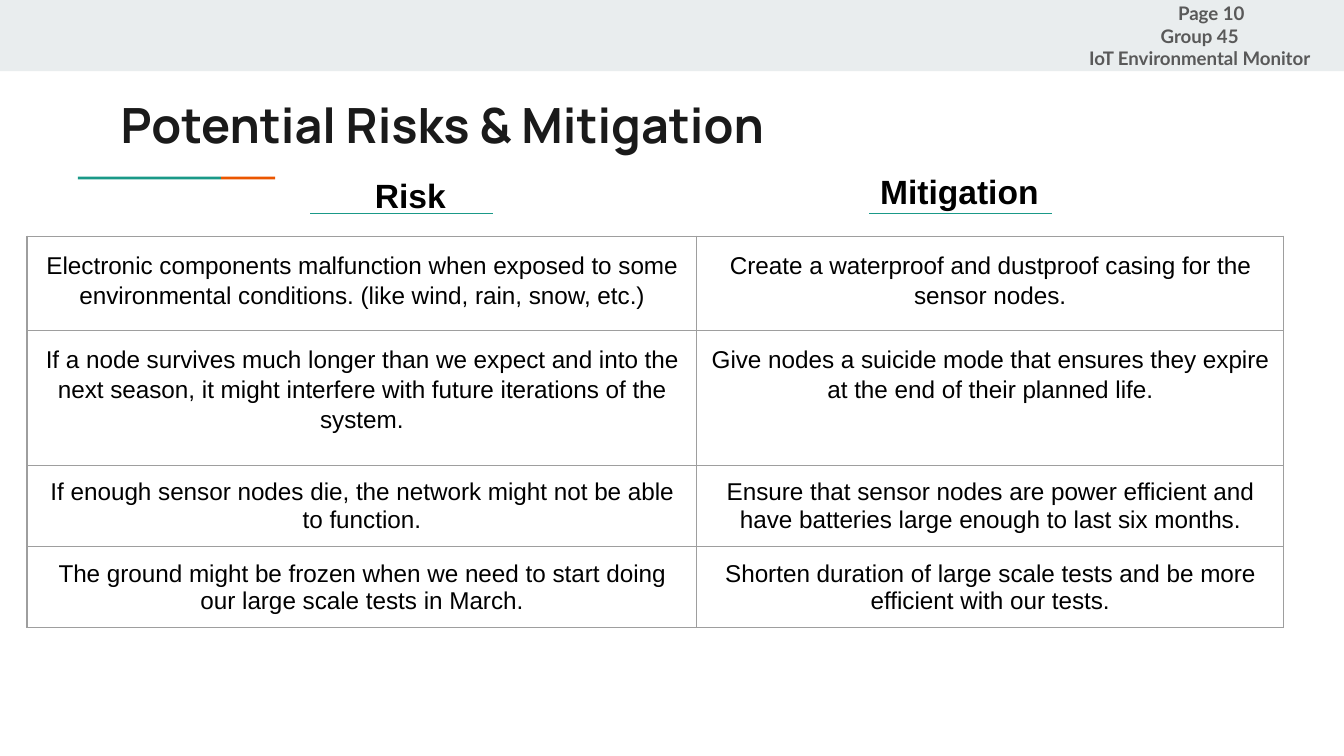
"""Build the "Potential Risks & Mitigation" slide."""
from dataclasses import dataclass

from lxml import etree
from pptx import Presentation
from pptx.dml.color import RGBColor
from pptx.enum.shapes import MSO_CONNECTOR, MSO_SHAPE
from pptx.enum.text import MSO_ANCHOR, PP_ALIGN
from pptx.oxml.ns import qn
from pptx.slide import Slide
from pptx.table import _Cell
from pptx.text.text import TextFrame
from pptx.util import Pt

CENTER, LEFT = PP_ALIGN.CENTER, PP_ALIGN.LEFT
TOP, MIDDLE = MSO_ANCHOR.TOP, MSO_ANCHOR.MIDDLE
RECTANGLE, STRAIGHT = MSO_SHAPE.RECTANGLE, MSO_CONNECTOR.STRAIGHT

BLACK = RGBColor(0x00, 0x00, 0x00)
INK = RGBColor(0x1A, 0x1A, 0x1A)
GRAY = RGBColor(0x59, 0x59, 0x59)
BAND = RGBColor(0xE9, 0xED, 0xEE)
TEAL = RGBColor(0x1A, 0x99, 0x88)
ORANGE = RGBColor(0xEB, 0x56, 0x00)
BORDER = RGBColor(0x9E, 0x9E, 0x9E)

SLIDE_WIDTH, SLIDE_HEIGHT = 720, 405
INSET = 7.2
RULE_WIDTH = 0.75
COLUMN_WIDTHS = (358.6, 314.6)


@dataclass(frozen=True)
class Bar:
    left: float
    top: float
    width: float
    height: float
    color: RGBColor


@dataclass(frozen=True)
class Label:
    text: str
    left: float
    top: float
    width: float
    height: float
    font: str
    size: float
    color: RGBColor
    align: PP_ALIGN = LEFT
    anchor: MSO_ANCHOR = TOP


@dataclass(frozen=True)
class Risk:
    risk: str
    mitigation: str
    height: float
    line_spacing: float = 1.0
    space_after: float = 0


BARS = (
    Bar(0, 0, SLIDE_WIDTH, 38.2, BAND),
    Bar(41.8, 94.6, 76.6, 1.6, TEAL),
    Bar(118.4, 94.6, 29, 1.6, ORANGE),
)
LABELS = (
    Label("Potential Risks & Mitigation", 57.6, 43.9, 605.5, 42.5, "Manrope", 26, INK),
    Label("Risk", 193.7, 86.4, 79.9, 34.6, "Arial", 18, BLACK),
    Label("Mitigation", 464.4, 84.2, 150.5, 34.6, "Arial", 18, BLACK),
)
PAGE_INFO = Label("Page 10\nGroup 45\nIoT Environmental Monitor",
                  571, 3.6, 143.3, 31, "Lato", 10, GRAY, CENTER, MIDDLE)
PAGE_INDENT = 53
UNDERLINE_LEFTS = (166.3, 465.8)
RISKS = (
    Risk("Electronic components malfunction when exposed to some environmental "
         "conditions. (like wind, rain, snow, etc.)",
         "Create a waterproof and dustproof casing for the sensor nodes.",
         50.4, 1.1, 10),
    Risk("If a node survives much longer than we expect and into the next season, "
         "it might interfere with future iterations of the system.",
         "Give nodes a suicide mode that ensures they expire at the end of their "
         "planned life.",
         72.4, 1.1, 10),
    Risk("If enough sensor nodes die, the network might not be able to function.",
         "Ensure that sensor nodes are power efficient and have batteries large "
         "enough to last six months.",
         43.4),
    Risk("The ground might be frozen when we need to start doing our large scale "
         "tests in March.",
         "Shorten duration of large scale tests and be more efficient with our tests.",
         43.4),
)


def draw_bar(slide: Slide, bar: Bar) -> None:
    """Draw a solid rectangle without an outline."""
    band = slide.shapes.add_shape(RECTANGLE, Pt(bar.left), Pt(bar.top),
                                  Pt(bar.width), Pt(bar.height))
    band.shadow.inherit = False
    band.fill.solid()
    band.fill.fore_color.rgb = bar.color
    band.line.fill.background()


def draw_label(slide: Slide, label: Label) -> TextFrame:
    """Draw a bold text box and return its text frame."""
    box = slide.shapes.add_textbox(Pt(label.left), Pt(label.top),
                                   Pt(label.width), Pt(label.height))
    frame = box.text_frame
    frame.word_wrap = True
    frame.vertical_anchor = label.anchor
    frame.margin_left = frame.margin_right = Pt(INSET)
    frame.margin_top = frame.margin_bottom = Pt(INSET)
    frame.text = label.text
    for paragraph in frame.paragraphs:
        paragraph.alignment = label.align
        for run in paragraph.runs:
            run.font.name = label.font
            run.font.size = Pt(label.size)
            run.font.bold = True
            run.font.color.rgb = label.color
    return frame


def draw_page_info(slide: Slide) -> None:
    """Draw the header lines, the first one indented from the left."""
    page_line = draw_label(slide, PAGE_INFO).paragraphs[0]
    page_line.alignment = LEFT
    properties = page_line._p.get_or_add_pPr()
    properties.set("marL", "0")
    properties.set("indent", str(Pt(PAGE_INDENT)))


def draw_underline(slide: Slide, left: float) -> None:
    """Draw the teal rule below a column heading."""
    rule = slide.shapes.add_connector(STRAIGHT, Pt(left), Pt(114.5),
                                      Pt(left + 97.9), Pt(114.5))
    rule.line.color.rgb = TEAL
    rule.line.width = Pt(RULE_WIDTH)
    etree.SubElement(rule._element.spPr, qn("a:effectLst"))


def add_borders(cell: _Cell) -> None:
    """Outline all four sides of a cell."""
    properties = cell._tc.get_or_add_tcPr()
    for position, side in enumerate(("a:lnL", "a:lnR", "a:lnT", "a:lnB")):
        edge = etree.Element(qn(side), w=str(Pt(RULE_WIDTH)))
        fill = etree.SubElement(edge, qn("a:solidFill"))
        etree.SubElement(fill, qn("a:srgbClr"), val=str(BORDER))
        properties.insert(position, edge)


def fill_cell(cell: _Cell, text: str, risk: Risk) -> None:
    """Write centred text into a transparent, outlined cell."""
    cell.fill.background()
    cell.margin_left = cell.margin_right = Pt(INSET)
    cell.margin_top = cell.margin_bottom = Pt(INSET)
    cell.text = text
    paragraph = cell.text_frame.paragraphs[0]
    paragraph.alignment = CENTER
    paragraph.line_spacing = risk.line_spacing
    paragraph.space_after = Pt(risk.space_after)
    font = paragraph.runs[0].font
    font.name = "Arial"
    font.size = Pt(13)
    font.color.rgb = BLACK
    add_borders(cell)


def draw_risks(slide: Slide) -> None:
    """Draw the table of risks and their mitigations."""
    height = sum(risk.height for risk in RISKS)
    table = slide.shapes.add_table(len(RISKS), len(COLUMN_WIDTHS), Pt(14.5), Pt(126.6),
                                   Pt(sum(COLUMN_WIDTHS)), Pt(height)).table
    table.first_row = table.horz_banding = False
    for column, width in zip(table.columns, COLUMN_WIDTHS):
        column.width = Pt(width)
    for row, risk in zip(table.rows, RISKS):
        row.height = Pt(risk.height)
        for cell, text in zip(row.cells, (risk.risk, risk.mitigation)):
            fill_cell(cell, text, risk)


def main() -> None:
    """Assemble and save the slide."""
    deck = Presentation()
    deck.slide_width, deck.slide_height = Pt(SLIDE_WIDTH), Pt(SLIDE_HEIGHT)
    slide = deck.slides.add_slide(deck.slide_layouts[6])
    for bar in BARS:
        draw_bar(slide, bar)
    draw_risks(slide)
    for label in LABELS:
        draw_label(slide, label)
    for left in UNDERLINE_LEFTS:
        draw_underline(slide, left)
    draw_page_info(slide)
    deck.save("out.pptx")


if __name__ == "__main__":
    main()
